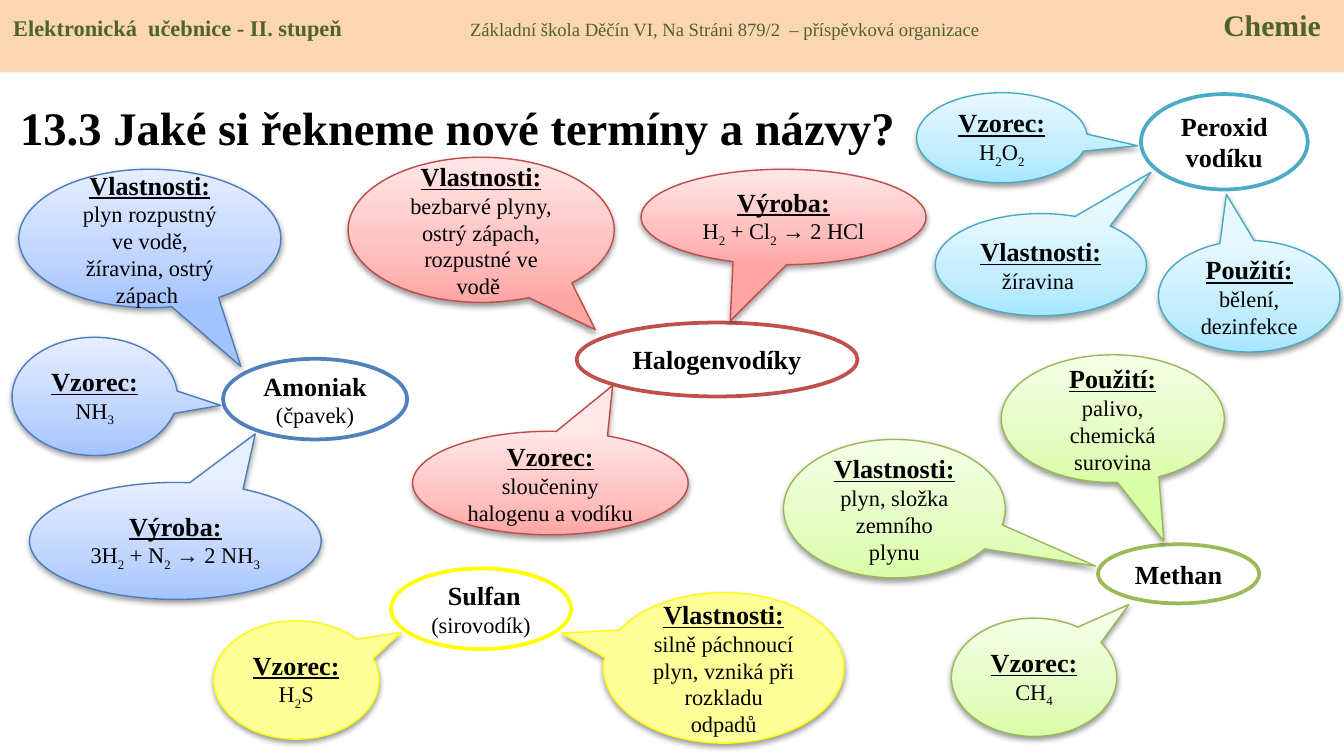
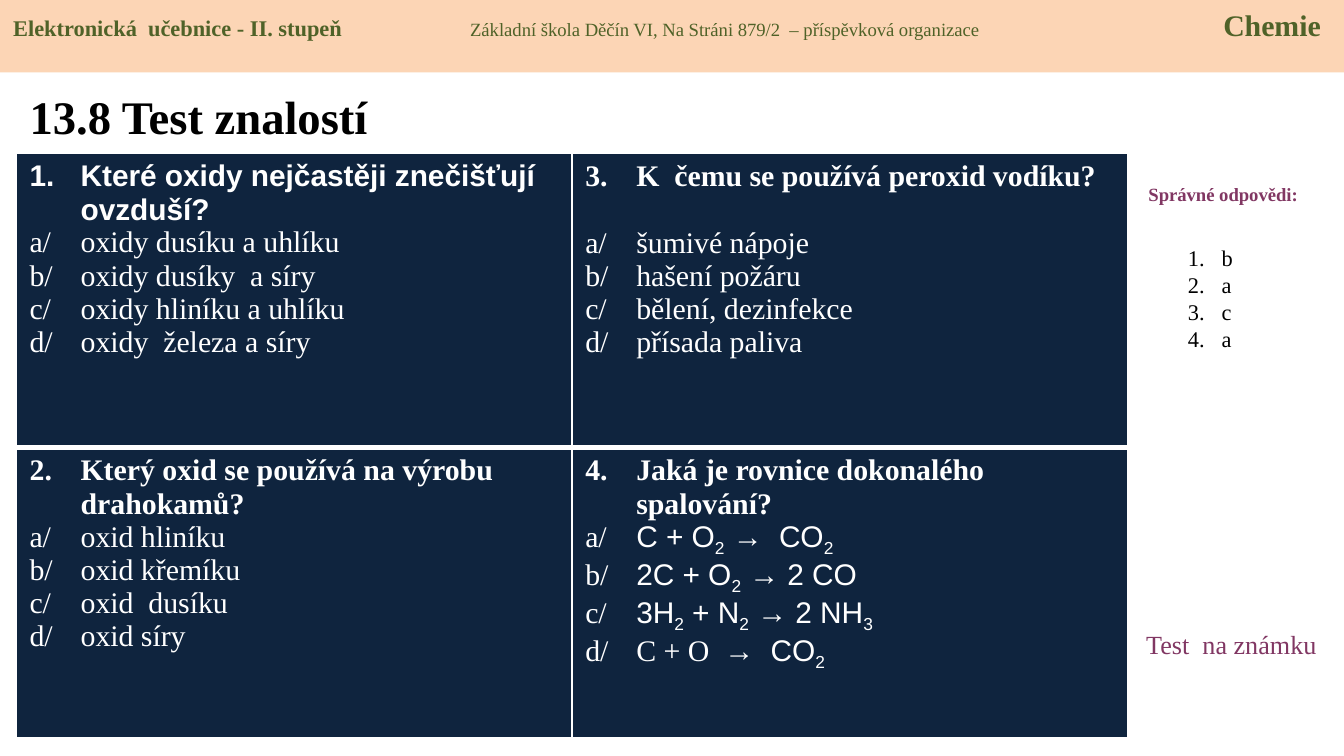
from dataclasses import dataclass

from pptx import Presentation
from pptx.dml.color import RGBColor
from pptx.enum.shapes import MSO_SHAPE
from pptx.enum.text import MSO_ANCHOR, PP_ALIGN
from pptx.oxml import parse_xml
from pptx.oxml.ns import nsdecls
from pptx.util import Inches, Pt


@dataclass(frozen=True)
class Theme:
    serif: str = "Times New Roman"
    sans: str = "Arial"
    black: str = "000000"
    white: str = "FFFFFF"
    band: str = "FCD5B5"
    band_text: str = "4F6228"
    cell: str = "0F243E"
    accent: str = "813763"
    title: int = 25
    question: int = 16
    heading: int = 14
    body: int = 12
    small: int = 10


THEME = Theme()


def write(paragraph, text, size, color=THEME.black, bold=False, underline=False, font=THEME.serif):
    """Append text to the paragraph; pieces between tildes become subscripts."""
    for index, piece in enumerate(text.split("~")):
        if not piece:
            continue
        run = paragraph.add_run()
        run.text = piece
        run.font.name = font
        run.font.size = Pt(size)
        run.font.bold = bold
        run.font.underline = underline
        run.font.color.rgb = RGBColor.from_string(color)
        if index % 2:
            run.font._element.set("baseline", "-25000")


def number(paragraph, indent, start=1):
    """Give the paragraph an automatic number and a hanging indent."""
    properties = paragraph._p.get_or_add_pPr()
    properties.set("marL", str(Inches(indent)))
    properties.set("indent", str(-Inches(indent)))
    properties.append(parse_xml(
        f'<a:buFont {nsdecls("a")} typeface="+mj-lt"/>'))
    properties.append(parse_xml(
        f'<a:buAutoNum {nsdecls("a")} type="arabicPeriod" startAt="{start}"/>'))


presentation = Presentation()
presentation.slide_width = Inches(10)
presentation.slide_height = Inches(10) * 9 // 16

# Both slides: header band and title
TITLES = [
    ("13.3 Jaké si řekneme nové termíny a názvy?", (0.05, 0.62, 8.11, 0.65)),
    ("13.8 Test znalostí", (0.12, 0.57, 3.19, 0.59)),
]
for title_text, box in TITLES:
    slide = presentation.slides.add_slide(presentation.slide_layouts[5])
    title = slide.shapes.title
    title.left, title.top, title.width, title.height = map(Inches, box)
    title.text_frame.vertical_anchor = MSO_ANCHOR.MIDDLE
    paragraph = title.text_frame.paragraphs[0]
    paragraph.alignment = PP_ALIGN.LEFT
    write(paragraph, title_text, THEME.title, bold=True)

    band = slide.shapes.add_shape(MSO_SHAPE.RECTANGLE, 0, 0, Inches(10), Inches(0.54))
    band.shadow.inherit = False
    band.fill.solid()
    band.fill.fore_color.rgb = RGBColor.from_string(THEME.band)
    band.line.fill.background()
    band.text_frame.vertical_anchor = MSO_ANCHOR.TOP
    paragraph = band.text_frame.paragraphs[0]
    paragraph.alignment = PP_ALIGN.LEFT
    paragraph._p.get_or_add_pPr().append(parse_xml(
        f'<a:tabLst {nsdecls("a")}><a:tab pos="{Inches(3.4)}" algn="l"/>'
        f'<a:tab pos="{Inches(9.73)}" algn="r"/></a:tabLst>'))
    write(paragraph, "Elektronická  učebnice - II. stupeň\t", THEME.body, THEME.band_text, bold=True)
    write(paragraph, "Základní škola Děčín VI, Na Stráni 879/2  – příspěvková organizace\t",
          THEME.small, THEME.band_text)
    write(paragraph, "Chemie", THEME.question, THEME.band_text, bold=True)

terms_slide, test_slide = presentation.slides

# Terms: each compound has its ellipse and callouts (box, pointer, heading, text)
COMPOUNDS = [
    {
        "name": "Amoniak", "alias": "(čpavek)", "box": (1.66, 2.67, 1.37, 0.6), "filled": False,
        "color": "4F81BD", "edge": "4B7EBC", "fills": ("A4C4FF", "BFD4FF", "E6EEFF"),
        "callouts": [
            ((0.14, 1.26, 1.95, 1.03), (0.347, 0.924), "Vlastnosti:",
             "plyn rozpustný ve vodě, žíravina, ostrý zápach "),
            ((0.09, 2.51, 1.23, 0.88), (0.762, 0.076), "Vzorec:", "NH~3~"),
            ((0.22, 3.59, 2.17, 0.87), (0.274, -0.916), "Výroba:", "3H~2~ + N~2~ → 2 NH~3~"),
        ],
    },
    {
        "name": "Peroxid vodíku", "alias": "", "box": (8.49, 0.7, 1.24, 0.71), "filled": True,
        "color": "4BACC6", "edge": "46AAC5", "fills": ("A7E6FF", "C1EDFF", "E7F8FF"),
        "callouts": [
            ((6.82, 0.69, 1.27, 0.67), (0.795, 0.089), "Vzorec:", "H~2~O~2~"),
            ((6.96, 1.59, 1.57, 0.76), (0.522, -0.904), "Vlastnosti:", "žíravina "),
            ((8.62, 1.79, 1.35, 0.83), (-0.126, -0.914), "Použití:", "bělení, dezinfekce"),
        ],
    },
    {
        "name": "Halogenvodíky", "alias": "", "box": (4.29, 2.4, 2.09, 0.55), "filled": True,
        "color": "C0504D", "edge": "BF4C48", "fills": ("FFA6A5", "FFC0BF", "FFE7E7"),
        "callouts": [
            ((2.59, 1.17, 1.98, 1.08), (0.429, 0.688), "Vlastnosti:",
             "bezbarvé plyny, ostrý zápach, rozpustné ve vodě "),
            ((3.07, 3.21, 2.05, 0.77), (0.226, -0.943), "Vzorec:", "sloučeniny halogenu a vodíku "),
            ((4.77, 1.26, 2.12, 0.71), (-0.187, 1.089), "Výroba:", "H~2~ + Cl~2~ → 2 HCl"),
        ],
    },
    {
        "name": " Sulfan", "alias": "(sirovodík)", "box": (2.91, 4.23, 1.34, 0.6), "filled": False,
        "color": "FFFF00", "edge": "FFFF00", "fills": ("FFFF99",),
        "callouts": [
            ((1.59, 4.62, 1.23, 0.88), (0.633, -0.402), "Vzorec:", "H~2~S"),
            ((4.49, 4.41, 1.79, 1.12), (-0.675, -0.232), "Vlastnosti:",
             "silně páchnoucí plyn, vzniká při rozkladu odpadů"),
        ],
    },
    {
        "name": "Methan", "alias": "", "box": (8.17, 4.05, 1.2, 0.44), "filled": True,
        "color": "9BBB59", "edge": "98B955", "fills": ("DAFDA7", "E4FCC2", "F5FFE7"),
        "callouts": [
            ((7.08, 4.6, 1.23, 0.88), (0.573, -0.616), "Vzorec:", "CH~4~"),
            ((5.83, 3.27, 1.65, 1.03), (0.907, 0.415), "Vlastnosti:", "plyn, složka zemního plynu"),
            ((7.45, 2.64, 1.66, 0.95), (0.229, 0.959), "Použití:", "palivo, chemická surovina"),
        ],
    },
]
for compound in COMPOUNDS:
    bubbles = [(compound["box"], None, compound["name"], compound["alias"]), *compound["callouts"]]
    for box, pointer, heading, text in bubbles:
        kind = MSO_SHAPE.OVAL_CALLOUT if pointer else MSO_SHAPE.OVAL
        shape = terms_slide.shapes.add_shape(kind, *map(Inches, box))
        shape.shadow.inherit = False
        shape.line.color.rgb = RGBColor.from_string(compound["edge" if pointer else "color"])
        shape.line.width = Pt(0.75 if pointer else 2)
        properties = shape._element.spPr

        if pointer:
            shape.adjustments[0], shape.adjustments[1] = pointer
            properties.find("{*}effectLst").append(parse_xml(
                f'<a:outerShdw {nsdecls("a")} blurRad="{Pt(3.1)}" dist="{Pt(1.6)}" dir="5400000" '
                'rotWithShape="0"><a:srgbClr val="000000"><a:alpha val="38000"/></a:srgbClr>'
                '</a:outerShdw>'))

        fills = compound["fills"] if pointer else (THEME.white,)
        if len(fills) > 1:
            stops = "".join(
                f'<a:gs pos="{position}"><a:srgbClr val="{color}"/></a:gs>'
                for position, color in zip((0, 35000, 100000), fills))
            properties.find("{*}prstGeom").addnext(parse_xml(
                f'<a:gradFill {nsdecls("a")} rotWithShape="1"><a:gsLst>{stops}</a:gsLst>'
                '<a:lin ang="16200000" scaled="1"/></a:gradFill>'))
        elif pointer or compound["filled"]:
            shape.fill.solid()
            shape.fill.fore_color.rgb = RGBColor.from_string(fills[0])
        else:
            shape.fill.background()

        text_frame = shape.text_frame
        text_frame.vertical_anchor = MSO_ANCHOR.MIDDLE
        text_frame.paragraphs[0].alignment = PP_ALIGN.CENTER
        write(text_frame.paragraphs[0], heading, THEME.heading, bold=True, underline=bool(pointer))
        if text:
            paragraph = text_frame.add_paragraph()
            paragraph.alignment = PP_ALIGN.CENTER
            write(paragraph, text, THEME.body)

# Test: questions in a 2 x 2 table, numbered down the columns.
# An option's words before "|" are set in the font of its letter.
INDENT = 0.38
QUESTIONS = [
    ("Které oxidy nejčastěji znečišťují ovzduší?", THEME.sans, THEME.serif,
     ["oxidy dusíku a uhlíku", "oxidy dusíky  a síry", "oxidy hliníku a uhlíku",
      "oxidy  železa a síry"]),
    ("Který oxid se používá na výrobu drahokamů?", THEME.serif, THEME.serif,
     ["oxid hliníku", "oxid křemíku", "oxid  dusíku", "oxid síry"]),
    ("K  čemu se používá peroxid vodíku?", THEME.serif, THEME.serif,
     ["šumivé nápoje", "hašení požáru", "bělení, dezinfekce", "přísada paliva"]),
    ("Jaká je rovnice dokonalého spalování?", THEME.serif, THEME.sans,
     ["C + O~2~ →  CO~2~", "2C + O~2~ → 2 CO", "3H~2~ + N~2~ → 2 NH~3~", "C + O  |→  CO~2~"]),
]
table_width = Inches(8.27)
table = test_slide.shapes.add_table(
    2, 2, Inches(0.12), Inches(1.14), table_width, Inches(4.35)).table
table.first_row = False
table.horz_banding = False
for row, height in zip(table.rows, (2.19, 2.16)):
    row.height = Inches(height)
for column in table.columns:
    column.width = table_width // 2

for index, (question, question_font, option_font, options) in enumerate(QUESTIONS):
    column, row = divmod(index, 2)
    cell = table.cell(row, column)
    cell.fill.solid()
    cell.fill.fore_color.rgb = RGBColor.from_string(THEME.cell)
    thick_side = "T" if row else "B"
    for position, side in enumerate("LRTB"):
        width = Pt(3 if side == thick_side else 1)
        cell._tc.get_or_add_tcPr().insert(position, parse_xml(
            f'<a:ln{side} {nsdecls("a")} w="{width}"><a:solidFill>'
            f'<a:srgbClr val="{THEME.white}"/></a:solidFill></a:ln{side}>'))

    paragraph = cell.text_frame.paragraphs[0]
    number(paragraph, INDENT, index + 1)
    write(paragraph, question, THEME.question, THEME.white, bold=True, font=question_font)
    if index == 2:
        paragraph.space_after = Pt(18)
    for letter, option in zip("abcd", options):
        paragraph = cell.text_frame.add_paragraph()
        paragraph._p.get_or_add_pPr().append(parse_xml(
            f'<a:tabLst {nsdecls("a")}><a:tab pos="{Inches(INDENT)}" algn="l"/></a:tabLst>'))
        opening, _, answer = option.rpartition("|")
        write(paragraph, f"{letter}/\t{opening}", THEME.question, THEME.white)
        write(paragraph, answer, THEME.question, THEME.white, font=option_font)

# Answers beside the table
LABELS = [
    ("Správné odpovědi:", (8.39, 1.31, 1.42, 0.27), THEME.small, True, PP_ALIGN.CENTER),
    ("Test  na známku", (8.43, 4.63, 1.57, 0.34), THEME.heading, False, PP_ALIGN.LEFT),
]
for text, box, size, bold, alignment in LABELS:
    label = test_slide.shapes.add_textbox(*map(Inches, box))
    label.text_frame.word_wrap = True
    paragraph = label.text_frame.paragraphs[0]
    paragraph.alignment = alignment
    write(paragraph, text, size, THEME.accent, bold=bold)

answers = test_slide.shapes.add_textbox(Inches(8.74), Inches(1.77), Inches(0.55), Inches(1.11))
answers.text_frame.word_wrap = True
answers.text_frame.text = "\n".join("baca")
for paragraph in answers.text_frame.paragraphs:
    number(paragraph, 0.25)
    for run in paragraph.runs:
        run.font.name = THEME.serif
        run.font.size = Pt(THEME.body)
        run.font.color.rgb = RGBColor.from_string(THEME.black)

presentation.save("out.pptx")
